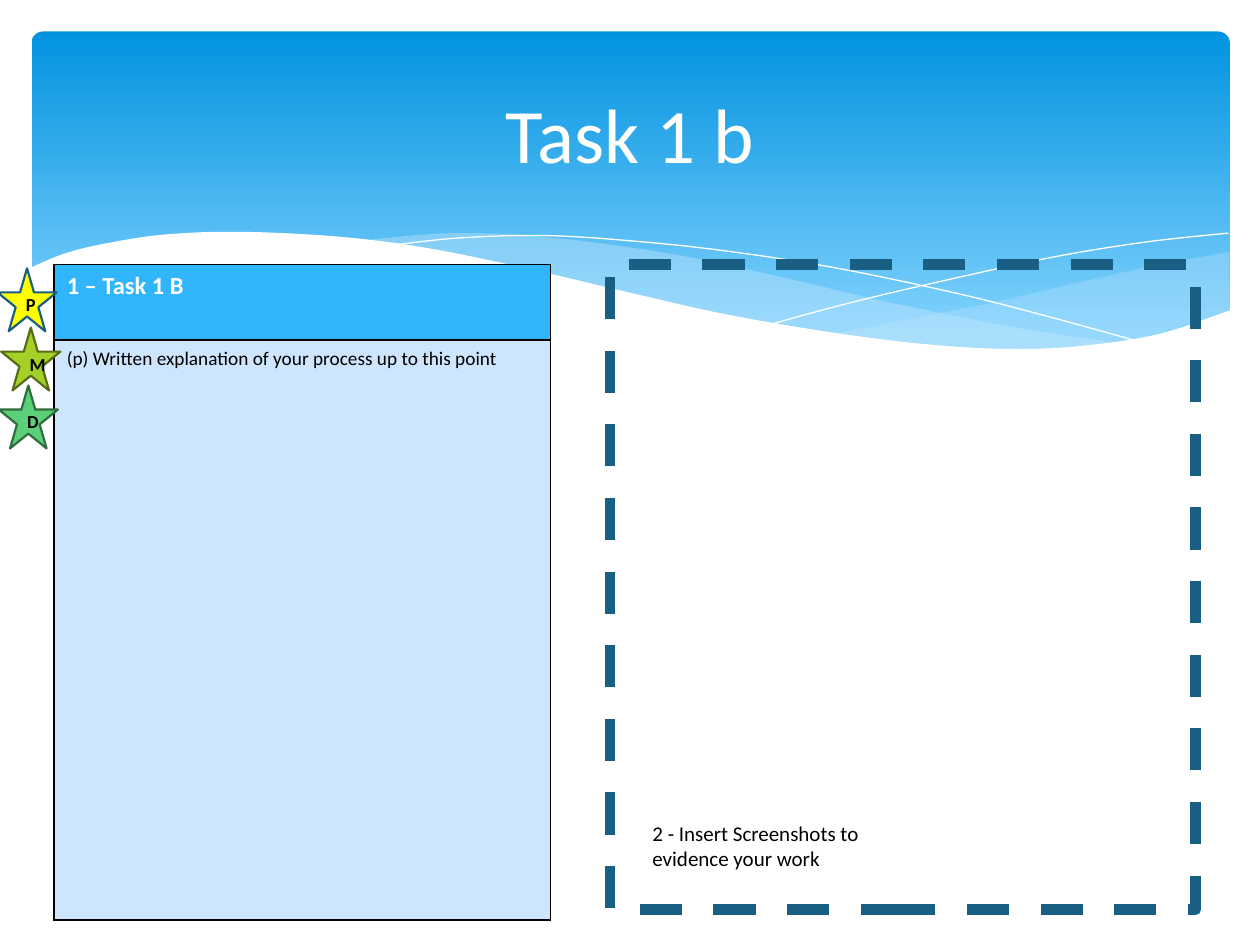
from dataclasses import dataclass

from lxml.etree import SubElement
from pptx import Presentation
from pptx.dml.color import RGBColor
from pptx.enum.dml import MSO_LINE_DASH_STYLE as Dash
from pptx.enum.shapes import MSO_AUTO_SHAPE_TYPE as Preset
from pptx.enum.text import MSO_ANCHOR as Anchor, MSO_AUTO_SIZE as AutoSize, PP_ALIGN as Align
from pptx.oxml.ns import qn
from pptx.util import Inches, Pt


@dataclass(frozen=True)
class Theme:
    font: str = "Calibri"
    title: float = 44
    heading: float = 14
    caption: float = 12
    body: float = 11
    badge: float = 10.5
    white: str = "FFFFFF"
    black: str = "000000"
    sky_top: str = "0293E0"
    sky_bottom: str = "83D3FE"
    mist: str = "C6E7FC"
    heading_fill: str = "31B6FD"
    body_fill: str = "CEE5FE"
    navy: str = "195F84"


@dataclass(frozen=True)
class Box:
    left: float
    top: float
    width: float
    height: float

    def inner(self, left, top, width, height):
        return Box(self.left + left, self.top + top, width, height)

    def emu(self):
        return [grid(value) for value in (self.left, self.top, self.width, self.height)]


THEME = Theme()
COLUMNS, ROWS = 100, 75
UNIT = Inches(10) / COLUMNS
WAVES = [
    ([[(97.55, 20), (92.1, 21), (86.1, 22.3), (77.9, 24.2), (66.1, 26.5)],
      [(66.1, 26.5), (73.2, 27.4), (81.4, 27.8), (89.7, 27), (97.6, 24.7)]], THEME.mist, 29),
    ([[(89.3, 27.3), (80.7, 26), (70.6, 24), (62.9, 22.2), (54.1, 20.3),
       (44.2, 18.9), (36.1, 18.5), (28.6, 19.1)],
      [(28.6, 19.1), (36.2, 20.3), (44.9, 22.2), (56.6, 24.8), (66.5, 26.6),
       (74.8, 27.6), (82.8, 27.8), (89.3, 27.3)]], THEME.mist, 40),
    ([[(30.9, 19.5), (36.3, 18.9), (43.3, 18.7), (51, 19.2), (58.2, 20),
       (66.5, 21.3), (76, 23.3), (83.1, 25.1), (90.7, 27.2)]], None, 100),
    ([[(61.3, 25.7), (67.2, 24.1), (74.8, 22.3), (83.6, 20.4), (91, 19.2), (97.5, 18.5)]],
     None, 100),
    ([[(97.7, 24.6), (92, 26.5), (86.3, 27.4), (80.9, 27.7), (74.4, 27.4), (66.8, 26.5),
       (57.9, 25), (50.3, 23.3), (41.8, 21.3), (34, 19.7), (27.1, 18.8), (19.3, 18.4),
       (13.2, 18.6), (8.5, 19.3), (5.2, 20.1), (2.3, 21.3)],
      [(2.3, 32.9), (97.7, 32.9)]], THEME.white, 100),
]
BADGES = [
    ("P", -0.2, 21.3, "FFFF00", "195F84"),
    ("M", 0.1, 26, "A5D028", "566D15"),
    ("D", -0.1, 30.6, "5BD078", "2F6D3F"),
]


def grid(value):
    return round(value * UNIT)


def color(value):
    return RGBColor.from_string(value)


def paint(fill, value):
    fill.solid()
    fill.fore_color.rgb = color(value)


def outline(shape, value, width):
    paint(shape.line.fill, value)
    shape.line.width = Pt(width)


def write(frame, text, size, value=THEME.black, bold=False, align=Align.LEFT):
    para = frame.paragraphs[0]
    para.alignment = align
    span = para.add_run()
    span.text = text
    formats = {"name": THEME.font, "size": Pt(size), "bold": bold}
    for name, setting in formats.items():
        setattr(span.font, name, setting)
    span.font.color.rgb = color(value)


def smooth_curve(points, steps=8):
    padded = [points[0], *points, points[-1]]
    curve = [points[0]]
    for a, b, c, d in zip(padded, padded[1:], padded[2:], padded[3:]):
        for step in range(1, steps + 1):
            t = step / steps
            curve.append(tuple(
                (2 * q + (r - p) * t + (2 * p - 5 * q + 4 * r - s) * t**2
                 + (3 * q - p - 3 * r + s) * t**3) / 2
                for p, q, r, s in zip(a, b, c, d)))
    return curve


def draw_wave(shapes, box, curves, fill, opacity):
    points = [(grid(box.left + x), grid(box.top + y))
              for curve in curves for x, y in smooth_curve(curve)]
    builder = shapes.build_freeform(*points[0])
    builder.add_line_segments(points[1:], close=fill is not None)
    wave = builder.convert_to_shape()
    wave.shadow.inherit = False
    if fill is None:
        wave.fill.background()
        outline(wave, THEME.white, 0)
        return
    paint(wave.fill, fill)
    wave.line.fill.background()
    if opacity < 100:
        tint = next(wave.element.spPr.iter(qn("a:srgbClr")))
        SubElement(tint, qn("a:alpha"), val=str(opacity * 1000))


def draw_header(page, box):
    sky = page.shapes.add_shape(Preset.ROUNDED_RECTANGLE, *box.inner(2.5, 2.5, 95.1, 27).emu())
    sky.adjustments[0] = 0.034
    sky.shadow.inherit = False
    sky.line.fill.background()
    sky.fill.gradient()
    sky.fill.gradient_angle = 270
    stops = [(0, THEME.sky_top), (0.9, THEME.sky_bottom)]
    for stop, (position, value) in zip(sky.fill.gradient_stops, stops):
        stop.position = position
        stop.color.rgb = color(value)
    waves = page.shapes.add_group_shape()
    for curves, fill, opacity in WAVES:
        draw_wave(waves.shapes, box, curves, fill, opacity)


def draw_title(page, box):
    title = page.shapes.title
    title.element.getparent().append(title.element)
    title.left, title.top, title.width, title.height = box.emu()
    title.text_frame.auto_size = AutoSize.NONE
    title.text_frame.vertical_anchor = Anchor.MIDDLE
    write(title.text_frame, "Task 1 b", THEME.title, THEME.white, align=Align.CENTER)


def border_cell(cell):
    properties = cell._tc.get_or_add_tcPr()
    for index, side in enumerate(("lnL", "lnR", "lnT", "lnB")):
        line = properties.makeelement(qn(f"a:{side}"), {"w": str(Pt(1))})
        SubElement(SubElement(line, qn("a:solidFill")), qn("a:srgbClr"), val=THEME.black)
        properties.insert(index, line)


def draw_task_table(page, box):
    table = page.shapes.add_table(2, 1, *box.emu()).table
    table.horz_banding = False
    table.columns[0].width = grid(box.width)
    heading_height = 6
    rows = [
        (heading_height, "1 – Task 1 B", THEME.heading, THEME.white, True, THEME.heading_fill),
        (box.height - heading_height, "(p) Written explanation of your process up to this point",
         THEME.body, THEME.black, False, THEME.body_fill),
    ]
    for index, (height, text, size, value, bold, fill) in enumerate(rows):
        table.rows[index].height = grid(height)
        cell = table.cell(index, 0)
        paint(cell.fill, fill)
        border_cell(cell)
        write(cell.text_frame, text, size, value, bold)


def draw_screenshot_panel(page, box):
    panel = page.shapes.add_group_shape()
    frame = panel.shapes.add_shape(Preset.RECTANGLE, *box.emu())
    frame.shadow.inherit = False
    frame.fill.background()
    outline(frame, THEME.navy, 6)
    frame.line.dash_style = Dash.DASH
    caption = panel.shapes.add_textbox(*box.inner(2.4, 43.6, 23.6, 5).emu())
    caption.text_frame.word_wrap = True
    write(caption.text_frame, "2 - Insert Screenshots to evidence your work", THEME.caption)


def draw_badges(page, box):
    for letter, left, top, fill, edge in BADGES:
        star = page.shapes.add_shape(Preset.STAR_5_POINT, *box.inner(left, top, 4.7, 5).emu())
        star.shadow.inherit = False
        paint(star.fill, fill)
        outline(star, edge, 1.25)
        star.text_frame.vertical_anchor = Anchor.MIDDLE
        write(star.text_frame, letter, THEME.badge, bold=True, align=Align.CENTER)


def main():
    deck = Presentation()
    deck.slide_width, deck.slide_height = grid(COLUMNS), grid(ROWS)
    page = deck.slides.add_slide(deck.slide_layouts[5])
    whole = Box(0, 0, COLUMNS, ROWS)
    draw_header(page, whole)
    draw_title(page, whole.inner(5, 3.7, 90, 13.7))
    draw_task_table(page, whole.inner(4.3, 21, 39.4, 52))
    draw_screenshot_panel(page, whole.inner(48.4, 21, 46.5, 51.2))
    draw_badges(page, whole)
    deck.save("out.pptx")


if __name__ == "__main__":
    main()
